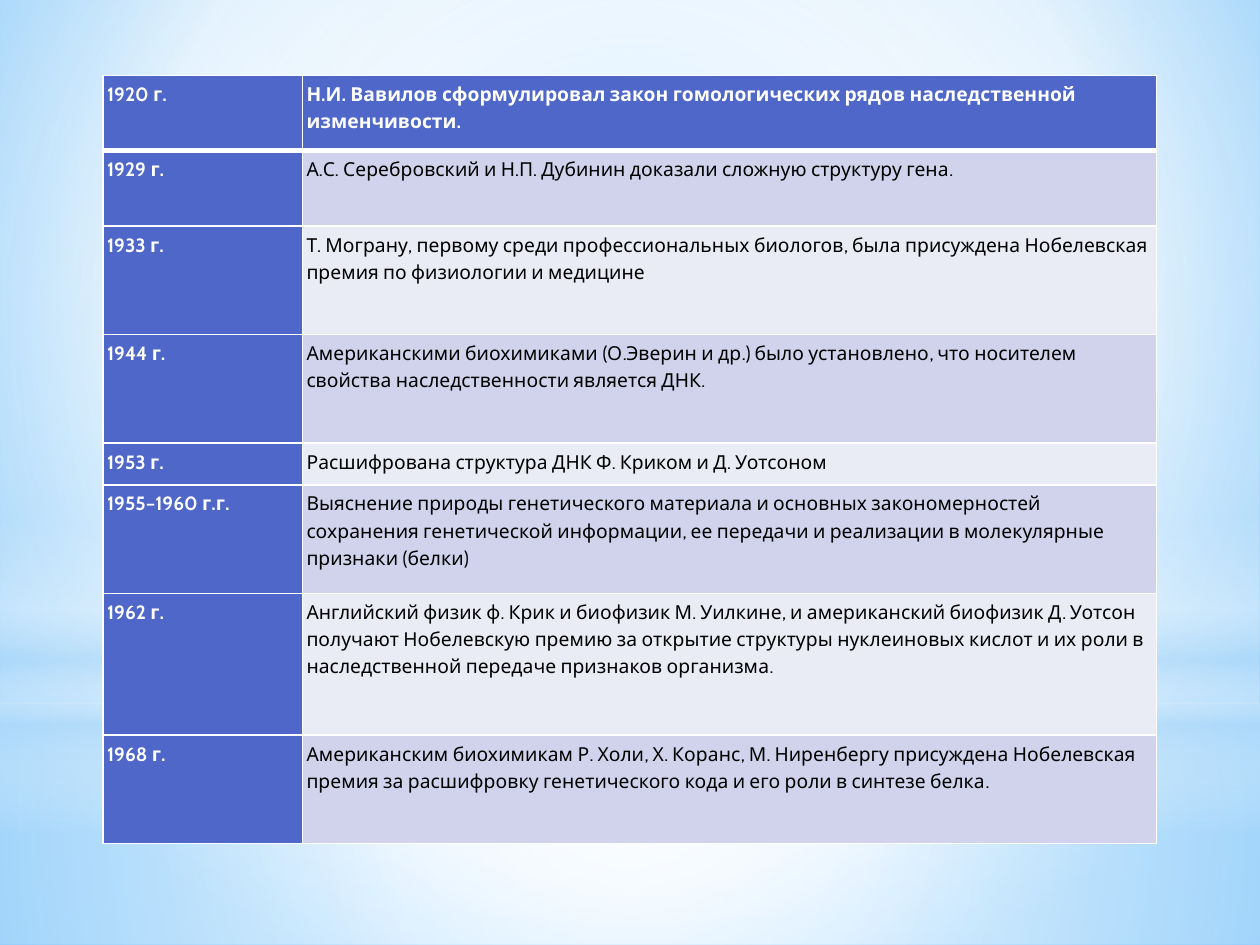
from dataclasses import dataclass

import pptx
import pptx.dml.color
import pptx.enum.shapes
import pptx.oxml
import pptx.oxml.ns
import pptx.util

Pt = pptx.util.Pt
qn = pptx.oxml.ns.qn
SHAPE = pptx.enum.shapes.MSO_SHAPE

COLOURS = {
    "header": "4E67C8",
    "band_dark": "D0D3EB",
    "band_light": "E9EBF5",
    "white": "FFFFFF",
    "black": "000000",
    "haze": "B4DCFA",
    "sky": "9ED5FF",
    "deep_sky": "5BB9FF",
}
CENTRE = (50, 50, 50, 50)
COLUMN_WIDTHS = (114, 488)
TABLE_LEFT, TABLE_TOP = 59, 43.2
CELL_MARGIN = 2.2


@dataclass(frozen=True)
class Stop:
    position: int
    colour: str
    opacity: int = 100


@dataclass(frozen=True)
class Glow:
    """A backdrop shape; without a focus its gradient runs downwards."""
    shape: int
    top: float
    height: float
    stops: tuple[Stop, ...]
    focus: tuple[int, ...] | None = CENTRE


@dataclass(frozen=True)
class Event:
    year: str
    text: str
    height: float


SKY_STOPS = (Stop(0, "sky"), Stop(60, "white"), Stop(100, "deep_sky"))
GLOWS = (
    Glow(SHAPE.RECTANGLE, 401.76, 138.24,
         (Stop(0, "white", 91), Stop(37, "white", 76), Stop(100, "haze", 79))),
    Glow(SHAPE.RECTANGLE, 0, 401.76,
         (Stop(0, "white", 89), Stop(48, "white", 62), Stop(100, "haze", 79))),
    Glow(SHAPE.RECTANGLE, 296.64, 180,
         (Stop(0, "white", 0), Stop(29, "white", 30), Stop(45, "haze", 40),
          Stop(55, "white", 26), Stop(65, "haze", 60), Stop(100, "white", 0)), None),
    Glow(SHAPE.OVAL, 126, 401.76, (Stop(0, "white"), Stop(56, "white", 0))),
)
EVENTS = (
    Event("1920 г.", "Н.И. Вавилов сформулировал закон гомологических рядов "
          "наследственной изменчивости.", 43),
    Event("1929 г.", "А.С. Серебровский и Н.П. Дубинин доказали сложную структуру гена.", 43),
    Event("1933 г.", "Т. Мограну, первому среди профессиональных биологов, была присуждена "
          "Нобелевская премия по физиологии и медицине", 62),
    Event("1944 г.", "Американскими биохимиками (О.Эверин и др.) было установлено, "
          "что носителем свойства наследственности является ДНК.", 62),
    Event("1953 г.", "Расшифрована структура ДНК Ф. Криком и Д. Уотсоном", 24),
    Event("1955–1960 г.г.", "Выяснение природы генетического материала и основных "
          "закономерностей сохранения генетической информации, ее передачи и реализации "
          "в молекулярные признаки (белки)", 62),
    Event("1962 г.", "Английский физик ф. Крик и биофизик М. Уилкине, и американский биофизик "
          "Д. Уотсон получают Нобелевскую премию за открытие структуры нуклеиновых кислот "
          "и их роли в наследственной передаче признаков организма.", 81),
    Event("1968 г.", "Американским биохимикам Р. Холи, Х. Коранс, М. Ниренбергу присуждена "
          "Нобелевская премия за расшифровку генетического кода и его роли "
          "в синтезе белка.", 62),
)


def rgb(name: str) -> pptx.dml.color.RGBColor:
    return pptx.dml.color.RGBColor.from_string(COLOURS[name])


def set_gradient(fill, owner, stops: tuple[Stop, ...], focus: tuple[int, ...] | None) -> None:
    """Give owner's fill the stops, spreading from the focus or running downwards."""
    fill.gradient()
    stop_xml = "".join(
        f'<a:gs pos="{stop.position * 1000}"><a:srgbClr val="{COLOURS[stop.colour]}">'
        f'<a:alpha val="{stop.opacity * 1000}"/></a:srgbClr></a:gs>'
        for stop in stops)
    if focus:
        sides = " ".join(f'{side}="{value * 1000}"' for side, value in zip("ltrb", focus))
        direction = f'<a:path path="circle"><a:fillToRect {sides}/></a:path>'
    else:
        direction = '<a:lin ang="5400000" scaled="0"/>'
    gradient = pptx.oxml.parse_xml(
        f'<a:gradFill {pptx.oxml.ns.nsdecls("a")} rotWithShape="1">'
        f"<a:gsLst>{stop_xml}</a:gsLst>{direction}</a:gradFill>")
    previous = next(owner.iter(qn("a:gradFill")))
    previous.getparent().replace(previous, gradient)


def add_glow(slide, glow: Glow, width: int) -> None:
    shape = slide.shapes.add_shape(glow.shape, 0, Pt(glow.top), width, Pt(glow.height))
    shape.shadow.inherit = False
    shape.line.fill.background()
    set_gradient(shape.fill, shape._element, glow.stops, glow.focus)


def set_borders(cell, widths: dict[str, float]) -> None:
    properties = cell._tc.get_or_add_tcPr()
    for index, side in enumerate("LRTB"):
        line = pptx.oxml.parse_xml(
            f'<a:ln{side} {pptx.oxml.ns.nsdecls("a")} w="{Pt(widths.get(side, 1))}">'
            f'<a:solidFill><a:srgbClr val="{COLOURS["white"]}"/></a:solidFill></a:ln{side}>')
        properties.insert(index, line)


def fill_cell(cell, text: str, fill: str, emphasised: bool) -> None:
    for side in ("left", "right", "top", "bottom"):
        setattr(cell, f"margin_{side}", Pt(CELL_MARGIN))
    cell.fill.solid()
    cell.fill.fore_color.rgb = rgb(fill)
    para = cell.text_frame.paragraphs[0]
    para.line_spacing = 1.15
    span = para.add_run()
    span.text = text
    for name, value in {"name": "Cabin", "size": Pt(11), "bold": emphasised}.items():
        setattr(span.font, name, value)
    span.font.color.rgb = rgb("white" if emphasised else "black")


def add_timeline(slide, events: tuple[Event, ...]) -> None:
    frame = slide.shapes.add_table(
        len(events), len(COLUMN_WIDTHS), Pt(TABLE_LEFT), Pt(TABLE_TOP),
        Pt(sum(COLUMN_WIDTHS)), Pt(sum(event.height for event in events)))
    table = frame.table
    for column, width in zip(table.columns, COLUMN_WIDTHS):
        column.width = Pt(width)
    for row_index, event in enumerate(events):
        table.rows[row_index].height = Pt(event.height)
        band = "band_dark" if row_index % 2 else "band_light"
        widths = {0: {"B": 3}, 1: {"T": 3}}.get(row_index, {})
        for column_index, text in enumerate((event.year, event.text)):
            emphasised = row_index == 0 or column_index == 0
            cell = table.cell(row_index, column_index)
            fill_cell(cell, text, "header" if emphasised else band, emphasised)
            set_borders(cell, widths)


def main() -> None:
    deck = pptx.Presentation()
    deck.slide_width, deck.slide_height = Pt(720), Pt(540)
    slide = deck.slides.add_slide(deck.slide_layouts[6])
    set_gradient(slide.background.fill, slide._element, SKY_STOPS, (20, 10, 20, 60))
    for glow in GLOWS:
        add_glow(slide, glow, deck.slide_width)
    add_timeline(slide, EVENTS)
    deck.save("out.pptx")


if __name__ == "__main__":
    main()
